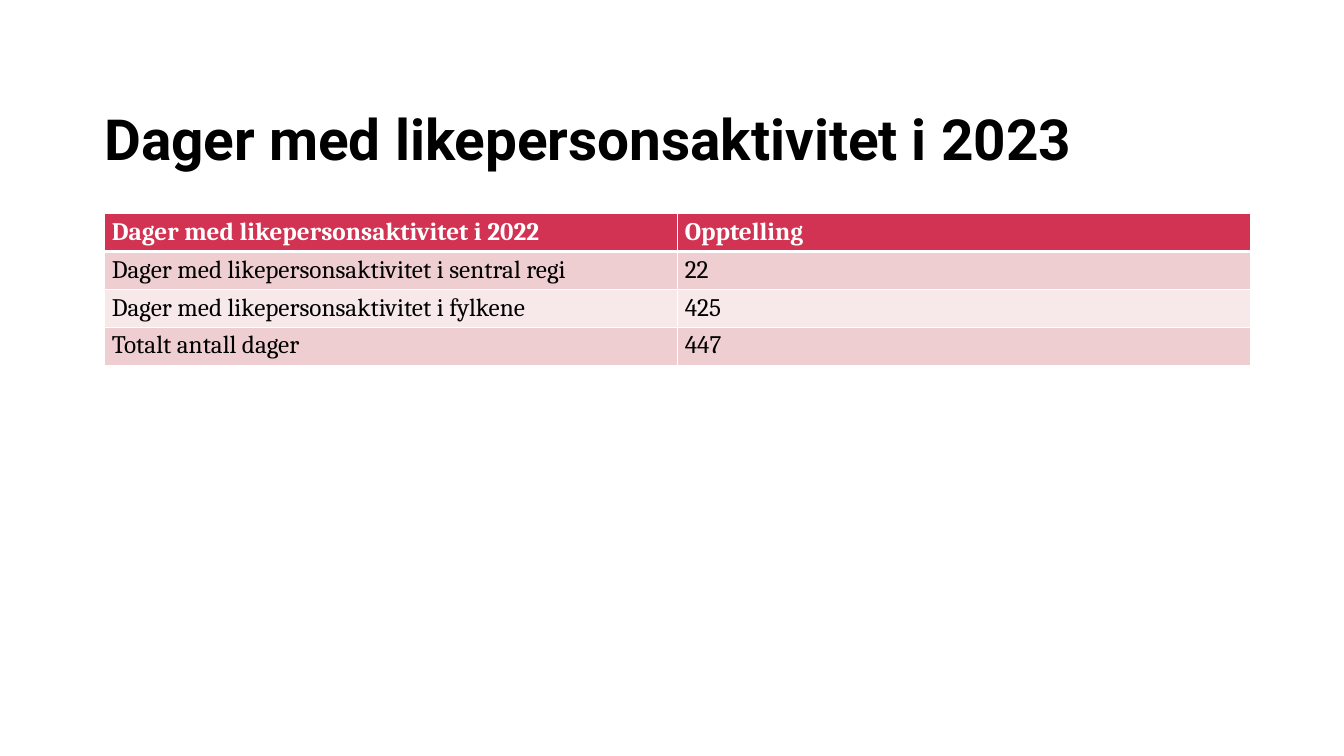
from dataclasses import dataclass

from lxml import etree
from pptx import Presentation
from pptx.dml.color import RGBColor
from pptx.enum.text import MSO_ANCHOR
from pptx.oxml.ns import qn
from pptx.util import Pt

ANCHOR_BOTTOM = MSO_ANCHOR.BOTTOM
BLANK_LAYOUT = 6


@dataclass(frozen=True)
class Theme:
    title_font: str = "Roboto"
    table_font: str = "Cambria"
    title_size: int = 54
    table_size: int = 24
    black: str = "000000"
    white: str = "FFFFFF"
    header: str = "D33352"
    bands: tuple = ("EFCED1", "F7E8E9")


THEME = Theme()
LEFT, CONTENT_WIDTH = 99.36, 1091.52
ROW_HEIGHT = 29.52
ROWS = [
    ("Dager med likepersonsaktivitet i 2022", "Opptelling"),
    ("Dager med likepersonsaktivitet i sentral regi", "22"),
    ("Dager med likepersonsaktivitet i fylkene", "425"),
    ("Totalt antall dager", "447"),
]


def add_run(paragraph, text, font, size, color, bold):
    run = paragraph.add_run()
    run.text = text
    run.font.name = font
    run.font.size = Pt(size)
    run.font.bold = bold
    run.font.color.rgb = RGBColor.from_string(color)


def add_border(cell, side, width):
    """Draw a white line on one side of a cell: L, R, T or B."""
    properties = cell._tc.get_or_add_tcPr()
    line = etree.SubElement(properties, qn(f"a:ln{side}"), w=str(Pt(width)))
    fill = etree.SubElement(line, qn("a:solidFill"))
    etree.SubElement(fill, qn("a:srgbClr"), val=THEME.white)


presentation = Presentation()
presentation.slide_width = Pt(1280.16)
presentation.slide_height = Pt(720)
slide = presentation.slides.add_slide(presentation.slide_layouts[BLANK_LAYOUT])

# Title
title = slide.shapes.add_textbox(Pt(LEFT), Pt(23.04), Pt(CONTENT_WIDTH), Pt(141.84))
frame = title.text_frame
frame.word_wrap = True
frame.vertical_anchor = ANCHOR_BOTTOM
frame.margin_left = frame.margin_right = frame.margin_top = frame.margin_bottom = 0
paragraph = frame.paragraphs[0]
paragraph.line_spacing = 0.9
add_run(paragraph, "Dager med likepersonsaktivitet i 2023",
        THEME.title_font, THEME.title_size, THEME.black, True)

# Table with a header row and alternating bands
table = slide.shapes.add_table(
    len(ROWS), len(ROWS[0]), Pt(LEFT), Pt(203.76),
    Pt(CONTENT_WIDTH), Pt(ROW_HEIGHT * len(ROWS))).table

for row_index, texts in enumerate(ROWS):
    is_header = row_index == 0
    fill_color = THEME.header if is_header else THEME.bands[(row_index - 1) % 2]
    text_color = THEME.white if is_header else THEME.black
    top_width = 3 if row_index == 1 else 1
    bottom_width = 3 if is_header else 1
    for column_index, text in enumerate(texts):
        cell = table.cell(row_index, column_index)
        for side, width in (("L", 1), ("R", 1), ("T", top_width), ("B", bottom_width)):
            add_border(cell, side, width)
        cell.fill.solid()
        cell.fill.fore_color.rgb = RGBColor.from_string(fill_color)
        add_run(cell.text_frame.paragraphs[0], text,
                THEME.table_font, THEME.table_size, text_color, is_header)

presentation.save("out.pptx")
